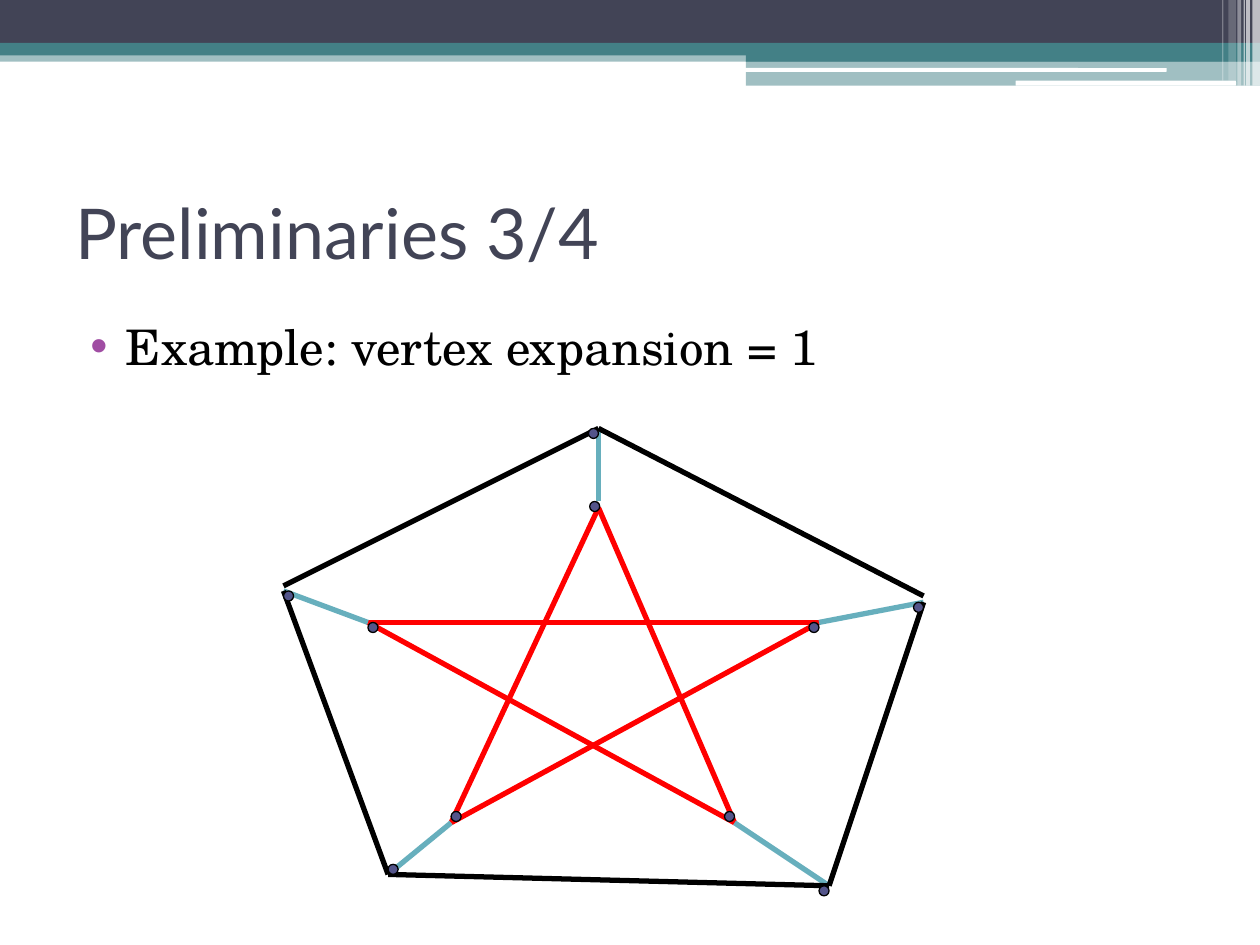
from dataclasses import dataclass

import pptx
import pptx.dml.color
import pptx.enum.shapes
import pptx.enum.text
import pptx.oxml.ns
import pptx.util
from lxml import etree

Inches = pptx.util.Inches
Pt = pptx.util.Pt
qn = pptx.oxml.ns.qn
Shape = pptx.enum.shapes.MSO_SHAPE


@dataclass(frozen=True)
class Theme:
    navy: str = "424456"
    teal: str = "438086"
    white: str = "FFFFFF"
    black: str = "000000"
    bullet: str = "A04DA3"
    star: str = "FF0000"
    spoke: str = "67AFBD"
    vertex: str = "53548A"
    title_font: str = "Lato"
    body_font: str = "TeX Gyre Schola"
    title_size: int = 40
    body_size: int = 28
    edge_width: float = 3
    vertex_outline: float = 0.75


THEME = Theme()


def rgb(color):
    return pptx.dml.color.RGBColor.from_string(color)


def add_filled(slide, preset, box, color, opacity=100):
    shape = slide.shapes.add_shape(preset, *map(Inches, box))
    shape.shadow.inherit = False
    shape.fill.solid()
    shape.fill.fore_color.rgb = rgb(color)
    shape.line.fill.background()
    if opacity < 100:
        tint = shape.fill._xPr.find(qn("a:solidFill"))[0]
        etree.SubElement(tint, qn("a:alpha"), val=str(opacity * 1000))
    return shape


def add_edge(slide, start, end, color):
    edge = slide.shapes.add_connector(
        pptx.enum.shapes.MSO_CONNECTOR.STRAIGHT, *map(Inches, (*start, *end)))
    edge.line.color.rgb = rgb(color)
    edge.line.width = Pt(THEME.edge_width)
    etree.SubElement(edge._element.spPr, qn("a:effectLst"))


def add_text(slide, box, text, font, size, color, anchor):
    frame = slide.shapes.add_textbox(*map(Inches, box)).text_frame
    frame.word_wrap = True
    frame.vertical_anchor = anchor
    paragraph = frame.paragraphs[0]
    run = paragraph.add_run()
    run.text = text
    run.font.name = font
    run.font.size = Pt(size)
    run.font.color.rgb = rgb(color)
    return paragraph


def build_header(slide, box):
    left, top, width, height = box
    tab = 5.92
    bands = [
        (0, 0.4, width, 0.09, THEME.teal, 50),
        (0, 0, width, 0.34, THEME.navy, 100),
        (0, 0.34, width, 0.1, THEME.teal, 100),
        (tab, 0.39, width - tab, 0.1, THEME.teal, 100),
        (tab, 0.48, width - tab, 0.2, THEME.teal, 50),
    ]
    for x, y, w, h, color, opacity in bands:
        add_filled(slide, Shape.RECTANGLE, (left + x, top + y, w, h), color, opacity)

    for x, y, w, h in [(5.91, 0.54, 3.35, 0.03), (8.06, 0.64, 1.75, 0.04)]:
        add_filled(slide, Shape.ROUNDED_RECTANGLE, (left + x, top + y, w, h), THEME.white)

    stripes = [
        (9.94, 0.06, height, 65), (9.89, 0.03, height, 65), (9.87, 0.01, height, 60),
        (9.82, 0.03, height, 40), (9.75, 0.06, 0.64, 20), (9.7, 0.01, 0.64, 30),
    ]
    for x, w, h, opacity in stripes:
        add_filled(slide, Shape.RECTANGLE, (left + x, top, w, h), THEME.white, opacity)


def build_title(slide, box):
    add_text(slide, box, "Preliminaries 3/4", THEME.title_font, THEME.title_size,
             THEME.navy, pptx.enum.text.MSO_ANCHOR.MIDDLE)


def build_body(slide, box):
    example = add_text(slide, box, "Example: vertex expansion = 1", THEME.body_font,
                       THEME.body_size, THEME.black, pptx.enum.text.MSO_ANCHOR.TOP)
    example.space_before = Pt(3)
    layout = example._p.get_or_add_pPr()
    layout.set("marL", str(Inches(0.4)))
    layout.set("indent", str(Inches(-0.28)))
    bullet_color = etree.SubElement(layout, qn("a:buClr"))
    etree.SubElement(bullet_color, qn("a:srgbClr"), val=THEME.bullet)
    etree.SubElement(layout, qn("a:buFont"), typeface="Arial")
    etree.SubElement(layout, qn("a:buChar"), char="•")


def build_petersen_graph(slide, box):
    left, top, width, height = box

    def at(point):
        return left + point[0], top + point[1]

    outer = [(2.5, 0), (width, 1.38), (4.33, 3.63), (0.83, 3.54), (0, 1.29)]
    inner = [(2.5, 0.63), (4.25, 1.54), (3.58, 3.13), (1.33, 3.13), (0.67, 1.54)]
    apex, right, low_right, low_left, far_left = outer

    star = [(inner[i], inner[(i + 2) % 5]) for i in range(5)]
    spokes = [((2.5, 0.58), apex), *zip(inner[1:], outer[1:])]
    rim = [(apex, (0, 1.25)), (low_left, far_left), (low_left, low_right),
           (right, low_right), (apex, (width, 1.33))]
    for edges, color in [(star, THEME.star), (spokes, THEME.spoke), (rim, THEME.black)]:
        for start, end in edges:
            add_edge(slide, at(start), at(end), color)

    dot = 0.08
    vertices = [
        (0.83, 3.46), (0, 1.29), (2.43, 0.58), (1.33, 3.04), (3.5, 3.04),
        (4.25, height - dot), (4.17, 1.54), (0.67, 1.54), (width - dot, 1.38), (2.42, 0),
    ]
    for corner in vertices:
        vertex = add_filled(slide, Shape.OVAL, (*at(corner), dot, dot), THEME.vertex)
        vertex.line.color.rgb = rgb(THEME.black)
        vertex.line.width = Pt(THEME.vertex_outline)


def main():
    deck = pptx.Presentation()
    deck.slide_width = Inches(10)
    deck.slide_height = Inches(7.5)
    slide = deck.slides.add_slide(deck.slide_layouts[6])
    build_header(slide, (0, 0, 10, 0.68))
    build_title(slide, (0.5, 1.25, 9, 1.17))
    build_body(slide, (0.5, 2.46, 9, 4.73))
    build_petersen_graph(slide, (2.25, 3.4, 5.08, 3.71))
    deck.save("out.pptx")


if __name__ == "__main__":
    main()
